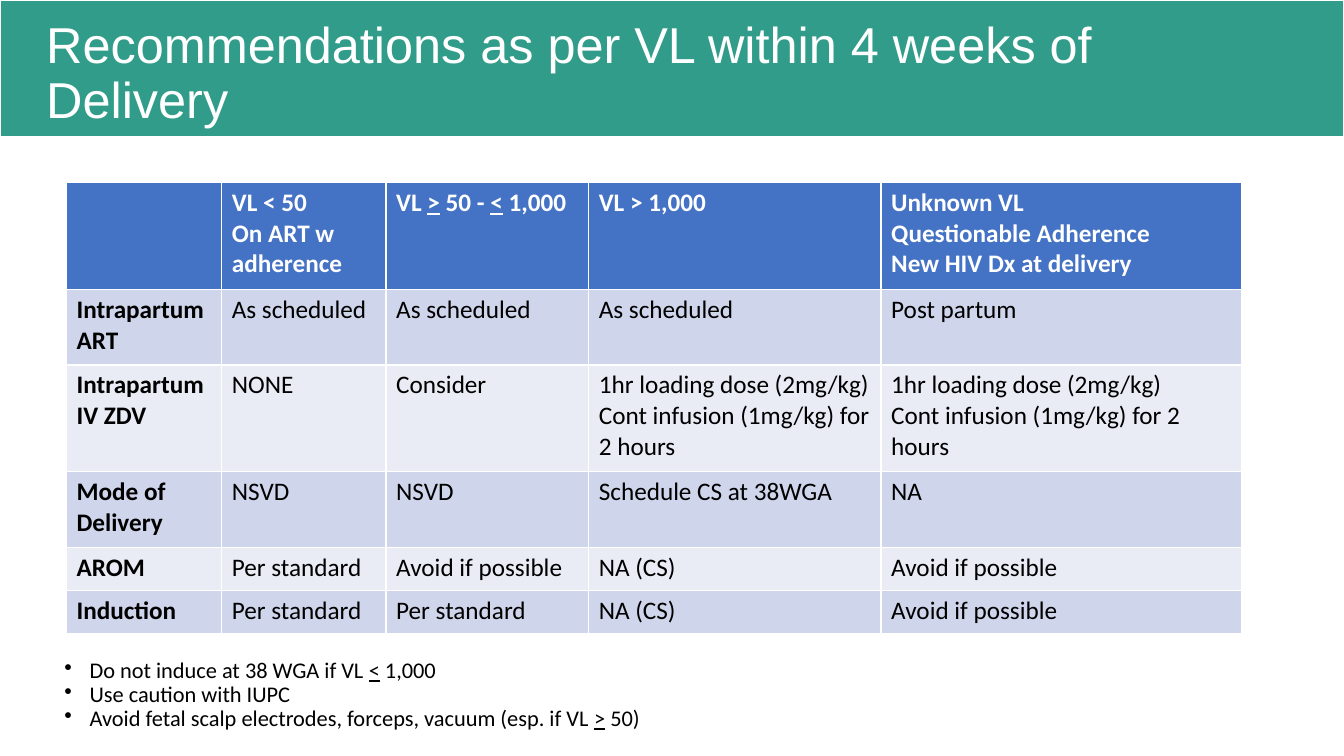
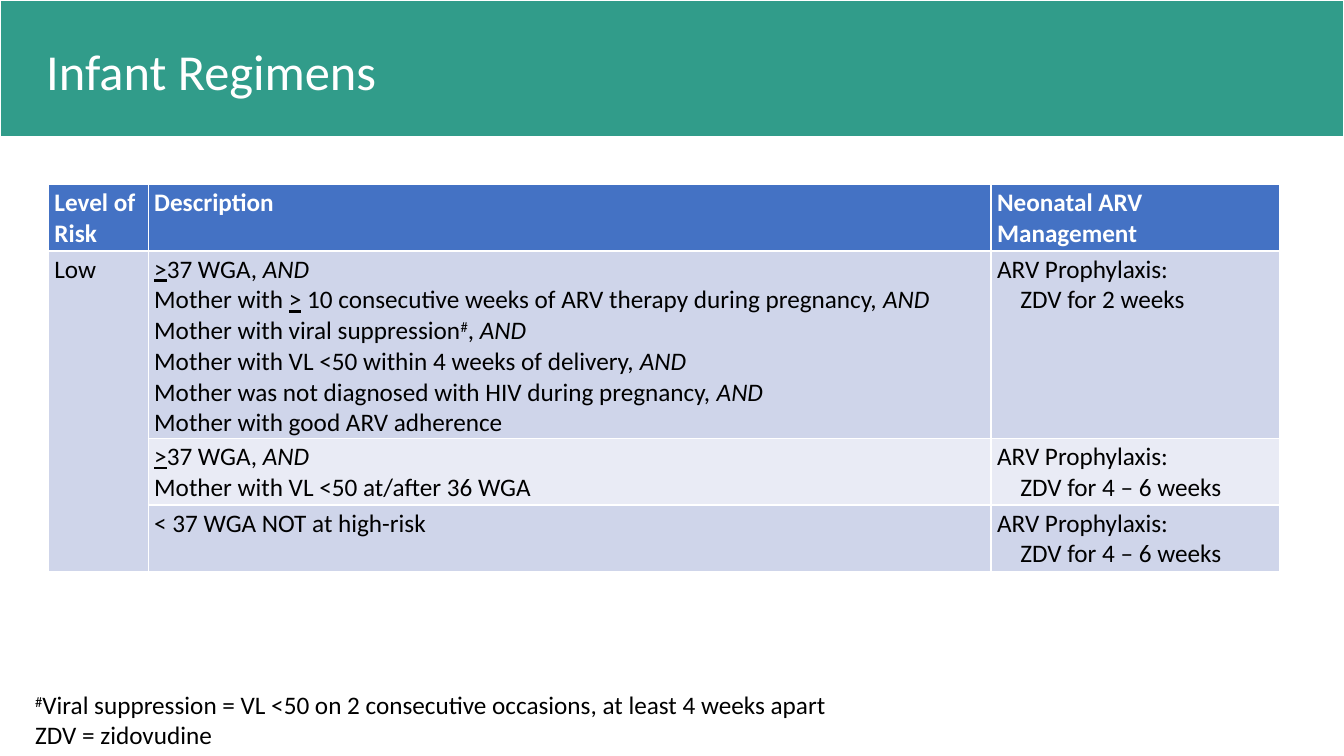
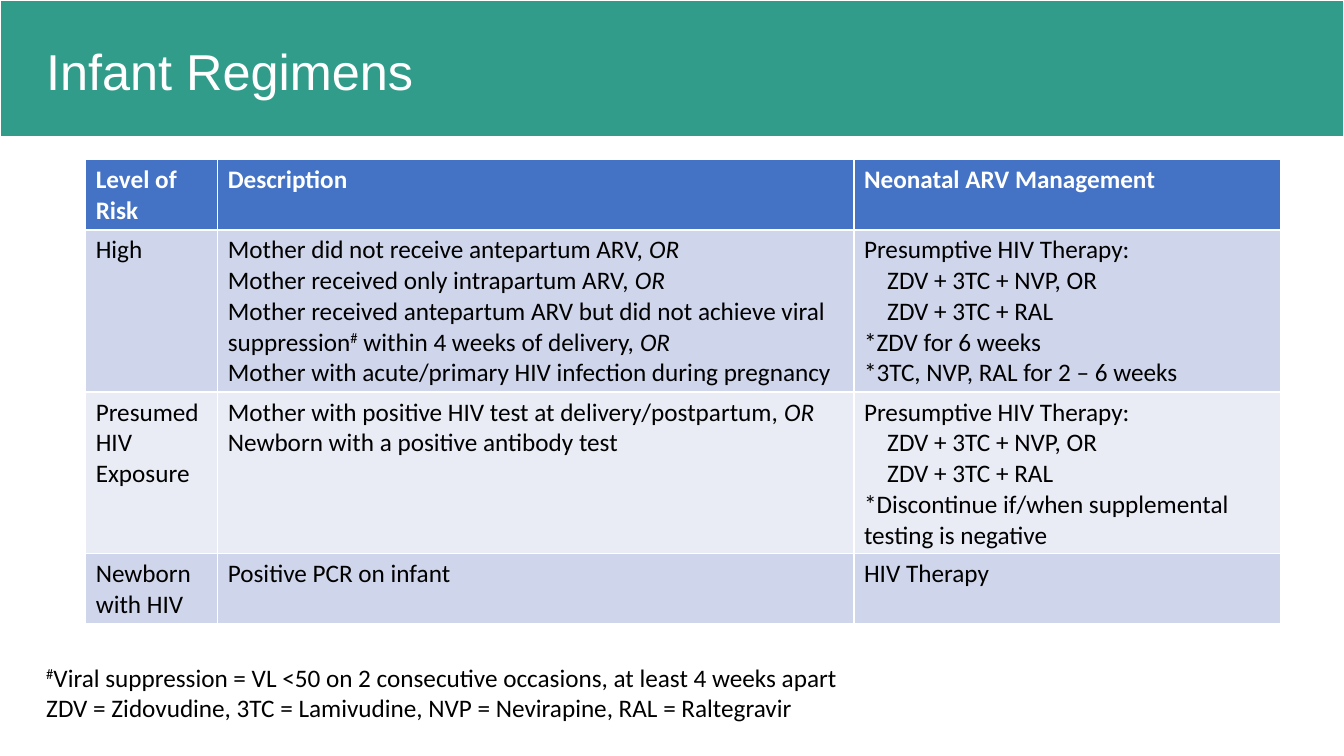
import collections
import pptx
import pptx.dml.color
import pptx.enum.text
import pptx.oxml
import pptx.oxml.ns
import pptx.util
from pptx.util import Inches

Mark = collections.namedtuple("Mark", "text style")
Indented = collections.namedtuple("Indented", "text")
Theme = collections.namedtuple(
    "Theme", "band header stripes white black body title_size body_size bullet_size")

THEME = Theme(band="319C8A", header="4472C4", stripes=("CFD5EA", "E9EBF5"),
              white="FFFFFF", black="000000", body="Calibri",
              title_size=36, body_size=18, bullet_size=16)

AT_LEAST = Mark(">", "underline")
AT_MOST = Mark("<", "underline")
AND = Mark("AND", "italic")
OR = Mark("OR", "italic")
HASH = Mark("#", "superscript")

SUPPRESSION = (HASH, "Viral suppression = VL <50 on 2 consecutive occasions, at least 4 weeks apart")
PROPHYLAXIS_LONG = ["ARV Prophylaxis:", Indented("ZDV for 4 – 6 weeks")]
PRESUMPTIVE = ["Presumptive HIV Therapy:", Indented("ZDV + 3TC + NVP, OR"),
               Indented("ZDV + 3TC + RAL")]

SLIDES = [
    dict(
        title="Recommendations as per VL within 4 weeks of Delivery",
        title_font="Arial",
        table=dict(
            at=(0.66, 1.81), columns=(1.54, 1.63, 2.01, 2.9, 3.58),
            heights=(1.06, 0.75, 1.06, 0.75, 0.43, 0.43),
            insets=(0.1, 0.05), bold_labels=True, merges=[],
            rows=[
                ["", ["VL < 50", "On ART w adherence"],
                 [("VL ", AT_LEAST, " 50 - ", AT_MOST, " 1,000")], "VL > 1,000",
                 ["Unknown VL", "Questionable Adherence", "New HIV Dx at delivery"]],
                ["Intrapartum ART", "As scheduled", "As scheduled", "As scheduled",
                 "Post partum"],
                ["Intrapartum IV ZDV", "NONE", "Consider",
                 ["1hr loading dose (2mg/kg)", "Cont infusion (1mg/kg) for 2 hours"],
                 ["1hr loading dose (2mg/kg)", "Cont infusion (1mg/kg) for 2 hours"]],
                ["Mode of Delivery", "NSVD", "NSVD", "Schedule CS at 38WGA", "NA"],
                ["AROM", "Per standard", "Avoid if possible", "NA (CS)", "Avoid if possible"],
                ["Induction", "Per standard", "Per standard", "NA (CS)", "Avoid if possible"],
            ]),
        notes=dict(
            at=(0.54, 6.49, 11.64, 1), bulleted=True,
            lines=[("Do not induce at 38 WGA if VL ", AT_MOST, " 1,000"),
                   "Use caution with IUPC",
                   ("Avoid fetal scalp electrodes, forceps, vacuum (esp. if VL ",
                    AT_LEAST, " 50)")])),
    dict(
        title="Infant Regimens",
        title_font="Calibri",
        table=dict(
            at=(0.48, 1.83), columns=(0.99, 8.36, 2.86), heights=(0.54, 1.53, 0.61, 0.54),
            insets=(0.06, 0.03), bold_labels=False, merges=[((1, 0), (3, 0))],
            rows=[
                ["Level of Risk", "Description", "Neonatal ARV Management"],
                ["Low",
                 [(AT_LEAST, "37 WGA, ", AND),
                  ("Mother with ", AT_LEAST,
                   " 10 consecutive weeks of ARV therapy during pregnancy, ", AND),
                  ("Mother with viral suppression", HASH, ", ", AND),
                  ("Mother with VL <50 within 4 weeks of delivery, ", AND),
                  ("Mother was not diagnosed with HIV during pregnancy, ", AND),
                  "Mother with good ARV adherence"],
                 ["ARV Prophylaxis:", Indented("ZDV for 2 weeks")]],
                ["", [(AT_LEAST, "37 WGA, ", AND), "Mother with VL <50 at/after 36 WGA"],
                 PROPHYLAXIS_LONG],
                ["", "< 37 WGA NOT at high-risk", PROPHYLAXIS_LONG],
            ]),
        notes=dict(at=(0.25, 6.79, 11.28, 0.71), bulleted=False,
                   lines=[SUPPRESSION, "ZDV = zidovudine"])),
    dict(
        title="Infant Regimens",
        title_font="Arial",
        table=dict(
            at=(0.85, 1.58), columns=(1.31, 6.31, 4.23), heights=(0.7, 1.61, 1.59, 0.7),
            insets=(0.1, 0.05), bold_labels=False, merges=[],
            rows=[
                ["Level of Risk", "Description", "Neonatal ARV Management"],
                ["High",
                 [("Mother did not receive antepartum ARV, ", OR),
                  ("Mother received only intrapartum ARV, ", OR),
                  ("Mother received antepartum ARV but did not achieve viral suppression",
                   HASH, " within 4 weeks of delivery, ", OR),
                  "Mother with acute/primary HIV infection during pregnancy"],
                 PRESUMPTIVE + ["*ZDV for 6 weeks", "*3TC, NVP, RAL for 2 – 6 weeks"]],
                [["Presumed HIV", "Exposure"],
                 [("Mother with positive HIV test at delivery/postpartum, ", OR),
                  "Newborn with a positive antibody test"],
                 PRESUMPTIVE + ["*Discontinue if/when supplemental testing is negative"]],
                ["Newborn with HIV", "Positive PCR on infant", "HIV Therapy"],
            ]),
        notes=dict(
            at=(0.36, 6.52, 11.28, 0.98), bulleted=False,
            lines=[SUPPRESSION,
                   "ZDV = Zidovudine, 3TC = Lamivudine, NVP = Nevirapine, RAL = Raltegravir"])),
]


def rgb(value):
    return pptx.dml.color.RGBColor.from_string(value)


def indent(paragraph, left, first=0):
    properties = paragraph._p.get_or_add_pPr()
    properties.set("marL", str(Inches(left)))
    properties.set("indent", str(Inches(first)))
    return properties


def write(frame, lines, size, color, font=THEME.body, bold=False, spacing=None, bulleted=False):
    frame.word_wrap = True
    for index, line in enumerate(lines):
        paragraph = frame.add_paragraph() if index else frame.paragraphs[0]
        if bulleted:
            pptx.oxml.ns.qn("a:buChar")
            bullet = paragraph._p.makeelement(pptx.oxml.ns.qn("a:buChar"), {"char": "•"})
            indent(paragraph, 0.25, -0.25).append(bullet)
        if isinstance(line, Indented):
            indent(paragraph, 0.23)
            line = line.text
        if spacing:
            paragraph.line_spacing = spacing
        for piece in (line,) if isinstance(line, str) else line:
            text, style = piece if isinstance(piece, Mark) else (piece, None)
            run = paragraph.add_run()
            run.text = text
            run.font.name, run.font.size = font, pptx.util.Pt(size)
            run.font.color.rgb = rgb(color)
            run.font.bold = bold
            if style == "superscript":
                run.font._element.set("baseline", "30000")
            elif style:
                setattr(run.font, style, True)


def paint(cell, fill, border, bottom):
    properties = cell._tc.get_or_add_tcPr()
    for side, width in (("L", border), ("R", border), ("T", border), ("B", bottom)):
        properties.append(pptx.oxml.parse_xml(
            f'<a:ln{side} {pptx.oxml.ns.nsdecls("a")} w="{pptx.util.Pt(width)}">'
            f'<a:solidFill><a:srgbClr val="{THEME.white}"/></a:solidFill></a:ln{side}>'))
    cell.fill.solid()
    cell.fill.fore_color.rgb = rgb(fill)


def new_table(slide, at, columns, heights):
    grid = slide.shapes.add_table(
        len(heights), len(columns), *map(Inches, (*at, sum(columns), sum(heights)))).table
    grid.first_row = grid.horz_banding = False
    for column, width in zip(grid.columns, columns):
        column.width = Inches(width)
    for row, height in zip(grid.rows, heights):
        row.height = Inches(height)
    return grid


def add_heading(slide, title, font):
    band = new_table(slide, (0, 0), (13.33,), (1.37,))
    paint(band.cell(0, 0), THEME.band, 1, 3)
    heading = slide.shapes.add_textbox(*map(Inches, (0.36, 0.24, 11.5, 1))).text_frame
    heading.vertical_anchor = pptx.enum.text.MSO_ANCHOR.MIDDLE
    write(heading, [title], THEME.title_size, THEME.white, font, spacing=0.9)


def add_regimens(slide, at, columns, heights, insets, bold_labels, merges, rows):
    grid = new_table(slide, at, columns, heights)
    for r, row in enumerate(rows):
        fill = THEME.stripes[(r - 1) % 2] if r else THEME.header
        for c, content in enumerate(row):
            cell = grid.cell(r, c)
            paint(cell, fill, 1.11, 1.11)
            cell.margin_left = cell.margin_right = Inches(insets[0])
            cell.margin_top = cell.margin_bottom = Inches(insets[1])
            if content:
                write(cell.text_frame, [content] if isinstance(content, str) else content,
                      THEME.body_size, THEME.black if r else THEME.white,
                      bold=r == 0 or (bold_labels and c == 0))
    for first, last in merges:
        grid.cell(*first).merge(grid.cell(*last))


def add_notes(slide, at, bulleted, lines):
    frame = slide.shapes.add_textbox(*map(Inches, at)).text_frame
    write(frame, lines, THEME.bullet_size if bulleted else THEME.body_size, THEME.black,
          spacing=0.9 if bulleted else None, bulleted=bulleted)


def main():
    deck = pptx.Presentation()
    deck.slide_width, deck.slide_height = Inches(13.33), Inches(7.5)
    for content in SLIDES:
        slide = deck.slides.add_slide(deck.slide_layouts[6])
        add_heading(slide, content["title"], content["title_font"])
        add_regimens(slide, **content["table"])
        add_notes(slide, **content["notes"])
    deck.save("out.pptx")


if __name__ == "__main__":
    main()
